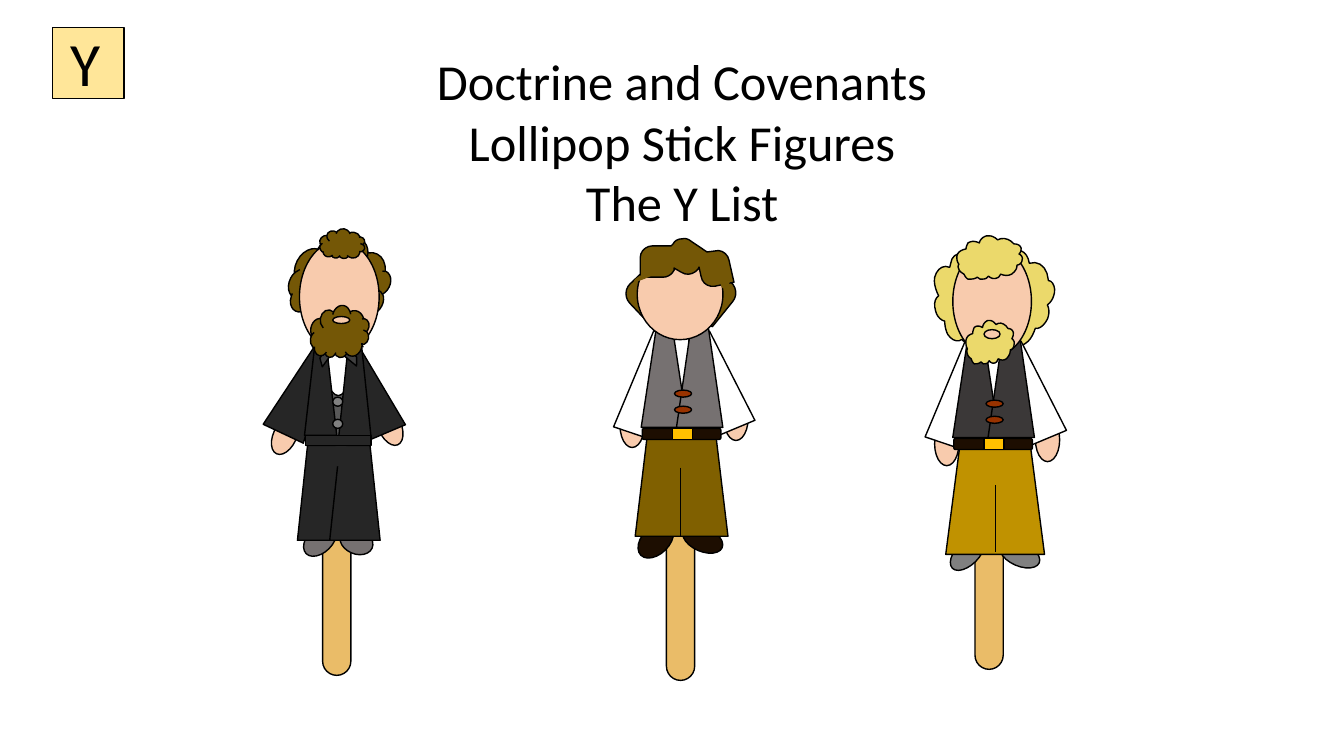
from pptx import Presentation
from pptx.dml.color import RGBColor
from pptx.enum.shapes import MSO_CONNECTOR, MSO_SHAPE
from pptx.enum.text import PP_ALIGN
from pptx.oxml.ns import qn
from pptx.util import Inches, Pt
from lxml import etree

OVAL, RECT, ROUND = MSO_SHAPE.OVAL, MSO_SHAPE.RECTANGLE, MSO_SHAPE.ROUNDED_RECTANGLE
TRAP, SLEEVE = MSO_SHAPE.TRAPEZOID, MSO_SHAPE.FLOWCHART_MANUAL_OPERATION
SLANT, CLOUD, MOON = MSO_SHAPE.FLOWCHART_DATA, MSO_SHAPE.CLOUD, MSO_SHAPE.MOON
DIAG = MSO_SHAPE.ROUND_2_DIAG_RECTANGLE
LINE = MSO_CONNECTOR.STRAIGHT
LEFT, CENTER = PP_ALIGN.LEFT, PP_ALIGN.CENTER

BLACK, WHITE, SKIN, WOOD = "000000", "FFFFFF", "F8CBAD", "EABC68"
BROWN, BLOND, LEATHER, GOLD = "745706", "EBD96B", "1D0E01", "FFC000"
COAL, GRAY, STONE, SLATE, RUST = "262626", "808080", "767171", "404040", "993300"

CURL = [
    (.32, 0), (.35, 0, .38, .02, .4, .04), (.45, .01, .52, .03, .56, .08),
    (.59, .08, .62, .09, .63, .12), (.63, .14, .63, .16, .61, .18),
    (.63, .19, .65, .21, .64, .24), (.64, .26, .62, .29, .59, .29),
    (.59, .32, .58, .34, .56, .36), (.53, .4, .47, .4, .43, .38), (.41, .41),
    (.38, .43, .34, .43, .31, .4), (.29, .42), (.28, .43, .24, .43, .23, .43),
    (.2, .41), (.18, .43, .14, .43, .11, .43), (.09, .42, .08, .4, .07, .38),
    (.04, .36), (.03, .35, .02, .34, .02, .33), (.01, .31, .01, .3, .02, .28),
    (0, .26, 0, .23, 0, .2), (.01, .16, .04, .14, .09, .13),
    (.09, .11, .1, .09, .11, .07), (.14, .05, .18, .05, .22, .07),
    (.23, .03, .26, .01, .29, 0), (.3, 0, .31, 0, .32, 0)]
MANE = [
    (.57, .01), (.61, .01, .65, .04, .67, .09), (.71, .09),
    (.73, .1, .75, .11, .77, .13), (.81, .12), (.82, .12, .84, .12, .85, .12),
    (.91, .12, .96, .17, .97, .25), (1.07, .22, 1.15, .29, 1.16, .42),
    (1.2, .42, 1.23, .48, 1.22, .54), (1.21, .59, 1.19, .63, 1.15, .66),
    (1.17, .7, 1.17, .75, 1.15, .8), (1.12, .86, 1.07, .9, 1.03, .89),
    (1.01, .95, .98, 1.01, .93, 1.04), (.86, 1.09, .79, 1.08, .75, 1.01),
    (.72, 1.04), (.67, 1.08, .6, 1.08, .57, 1.02), (.55, 1), (.53, 1.02),
    (.5, 1.05), (.44, 1.08, .36, 1.07, .3, 1), (.26, 1.03, .2, 1.01, .16, .95),
    (.14, .91, .13, .86, .13, .82), (.09, .81, .05, .77, .04, .72),
    (.02, .65, .03, .6, .07, .57), (.04, .51, .02, .45, .03, .39),
    (.05, .31, .11, .26, .18, .29), (.19, .25), (.2, .17, .27, .13, .34, .18),
    (.34, .15), (.34, .12, .35, .09, .37, .08), (.4, .06, .42, .06, .45, .08),
    (.48, .09), (.48, .05, .51, .02, .54, .01), (.55, 0, .56, 0, .57, .01)]
FRINGE = [
    (.42, .01), (.45, 0, .47, .01, .49, .02), (.67, .14), (.75, .13),
    (.81, .11, .88, .16, .89, .22), (.94, .44), (.75, .48),
    (.68, .49, .62, .45, .61, .38), (.59, .29), (.58, .31),
    (.54, .36, .47, .38, .41, .34), (.34, .3), (.34, .32),
    (.32, .36, .28, .39, .23, .39), (0, .39), (0, .2),
    (0, .13, .06, .08, .12, .08), (.31, .08), (.33, .06),
    (.35, .02, .39, .01, .42, .01)]


def rgb(code):
    return RGBColor.from_string(code)


def trace(steps):
    dots = []
    for step in steps:
        if len(step) == 2:
            dots.append(step)
            continue
        knots = [dots[-1], step[:2], step[2:4], step[4:]]
        for t in (.2, .4, .6, .8, 1):
            u = 1 - t
            mix = (u ** 3, 3 * u * u * t, 3 * u * t * t, t ** 3)
            dots.append(tuple(sum(m * k[i] for m, k in zip(mix, knots)) for i in (0, 1)))
    return dots


def outline(group, steps, x, y, w, h):
    dots = trace(steps)
    wide, high = (max(axis) for axis in zip(*dots))
    spots = [(Inches(x + a * w / wide), Inches(y + b * h / high)) for a, b in dots]
    pen = group.shapes.build_freeform(*spots[0])
    pen.add_line_segments(spots[1:], close=True)
    return pen.convert_to_shape()


def part(group, kind, x, y, w, h, fill, fmt=None, adj=(), edge=True, flip=False):
    if isinstance(kind, list):
        shape = outline(group, kind, x, y, w, h)
    else:
        shape = group.shapes.add_shape(kind, Inches(x), Inches(y), Inches(w), Inches(h))
    shape.shadow.inherit = False
    shape.fill.solid()
    shape.fill.fore_color.rgb = rgb(fill)
    if edge:
        shape.line.color.rgb = rgb(BLACK)
        shape.line.width = Pt(1)
    else:
        shape.line.fill.background()
    for i, value in enumerate(adj):
        shape.adjustments[i] = value
    for key, value in (fmt or {}).items():
        setattr(shape, key, value)
    if flip:
        shape._element.spPr.find(qn("a:xfrm")).set("flipH", "1")


def figure(slide, x, y, parts):
    group = slide.shapes.add_group_shape()
    for kind, dx, dy, *rest in parts:
        opts = rest.pop() if isinstance(rest[-1], dict) else {}
        turn = {"rotation": opts.pop("rot", 0)}
        part(group, kind, x + dx, y + dy, *rest, fmt=turn, **opts)
    return group


def words(slide, x, y, w, h, lines, size, align):
    frame = slide.shapes.add_textbox(Inches(x), Inches(y), Inches(w), Inches(h)).text_frame
    frame.word_wrap = True
    frame.text = "\n".join(lines)
    for para in frame.paragraphs:
        para.alignment = align
        for key, value in {"name": "Calibri", "size": Pt(size)}.items():
            setattr(para.font, key, value)
        para.font.color.rgb = rgb(BLACK)


def farmer(slide, x, y, stick, back, feet, legs, hands, vest, front, seam):
    body = [(TRAP, .27, .06, .7, .98, WHITE)]
    body += [(OVAL, dx, dy, .24, .43, SKIN) for dx, dy in hands]
    body += [
        (SLEEVE, .79, .03, .37, .99, WHITE, {"rot": 157.3}),
        (SLEEVE, .09, .03, .37, 1.03, WHITE, {"rot": 198.6}),
        (ROUND, .22, .99, .78, .11, LEATHER),
        (RECT, .52, .99, .2, .11, GOLD),
        (TRAP, .21, 0, .46, .98, vest, {"adj": [.324]}),
        (TRAP, .56, 0, .46, .98, vest, {"adj": [.309]})]
    body += [(OVAL, .54, dy, .17, .07, RUST) for dy in (.61, .77)]
    pole = [(ROUND, *stick, .28, 2.22, WOOD, {"adj": [.5]})]
    group = figure(slide, x, y, pole + back + feet + legs + body + front)
    dx, top, end = seam
    line = group.shapes.add_connector(
        LINE, Inches(x + dx), Inches(y + top), Inches(x + dx), Inches(y + end))
    line.line.color.rgb = rgb(BLACK)
    line.line.width = Pt(.5)
    etree.SubElement(line._element.spPr, qn("a:effectLst"))


def preacher(slide, x, y):
    figure(slide, x, y, [
        (ROUND, .5, 2.28, .28, 2.22, WOOD, {"adj": [.5]}),
        (OVAL, .01, 1.93, .23, .39, SKIN, {"rot": 25}),
        (OVAL, 1.05, 1.82, .23, .41, SKIN, {"rot": 337}),
        (TRAP, .1, 1.16, .44, .99, COAL, {"rot": 25.2, "adj": [.324]}),
        (TRAP, .75, 1.17, .4, .96, COAL, {"rot": 337, "adj": [.324]}),
        (OVAL, .35, 2.96, .25, .39, STONE, {"rot": 45.1}),
        (TRAP, .33, 1.26, .65, .91, WHITE),
        (OVAL, .71, 3, .25, .34, STONE, {"rot": 293.5}),
        *[(SLEEVE, dx, 2.22, .5, .94, COAL, {"rot": 180}) for dx in (.25, .57)],
        (OVAL, .55, 2.22, .27, .21, COAL, {"edge": False}),
        (MOON, .28, 1.64, .75, .32, "595959", {"rot": 270, "adj": [.601]}),
        (TRAP, .66, 1.24, .32, .89, COAL, {"adj": [.29]}),
        (TRAP, .32, 1.21, .32, .91, COAL, {"adj": [.324]}),
        (RECT, .33, 2.12, .65, .1, COAL),
        *[(OVAL, .6, dy, .1, .09, GRAY) for dy in (1.74, 1.96)],
        (SLANT, .41, 1.27, .28, .07, SLATE, {"rot": 125.9}),
        (SLANT, .61, 1.28, .28, .07, SLATE, {"rot": 219.5, "flip": True}),
        (SLANT, .4, 1.14, .28, .1, WHITE, {"rot": 180}),
        (SLANT, .62, 1.14, .28, .1, WHITE, {"rot": 180, "flip": True}),
        (ROUND, .61, 1.15, .12, .1, SLATE, {"rot": 180}),
        (CLOUD, .2, .13, .95, .93, BROWN, {"rot": 207.3}),
        (OVAL, .27, .19, .79, 1.11, SKIN),
        (CLOUD, .38, .83, .58, .53, BROWN, {"rot": 189.1}),
        (OVAL, .6, .94, .17, .07, SKIN),
        (OVAL, .61, .15, .17, .17, BROWN, {"rot": 65.4, "edge": False}),
        (CLOUD, .47, .07, .45, .3, BROWN, {"rot": 189.1})])


def main():
    deck = Presentation()
    deck.slide_width, deck.slide_height = Inches(13.33), Inches(7.5)
    slide = deck.slides.add_slide(deck.slide_layouts[6])
    title = ["Doctrine and Covenants", "Lollipop Stick Figures", "The Y List"]
    words(slide, 3.92, .45, 5.69, 2.52, title, 36, CENTER)
    farmer(
        slide, 9.24, 3.36, (.43, 1.06), [(MANE, 0, -1, 1.22, 1.08, BLOND)],
        [(OVAL, .24, 1.92, .23, .42, GRAY, {"rot": 45.1}),
         (OVAL, .76, 1.93, .23, .42, GRAY, {"rot": 293.5})],
        [(TRAP, .14, 1.03, .98, 1.11, "C09200", {"adj": [.147]})],
        [(.03, .83), (1.03, .79)], "3B3838",
        [(OVAL, .21, -.92, .78, 1.1, SKIN),
         (CURL, .25, -1.02, .65, .43, BLOND),
         (CURL, .34, -.18, .48, .43, BLOND),
         (OVAL, .52, -.09, .16, .09, SKIN)],
        (.63, 1.45, 2.12))
    farmer(
        slide, 6.15, 3.26, (.46, 1.27), [],
        [(OVAL, .22, 1.89, .27, .42, LEATHER, {"rot": 45.1}),
         (OVAL, .7, 1.88, .24, .42, LEATHER, {"rot": 293.5})],
        [(TRAP, .15, .93, .92, 1.13, "806000", {"adj": [.147]})],
        [(0, .75), (1.03, .68)], STONE,
        [(DIAG, .69, -.49, .46, .36, BROWN, {"rot": 308.9, "adj": [.384, 0]}),
         (DIAG, .09, -.53, .36, .4, BROWN, {"rot": 316.7, "adj": [.384, 0]}),
         (OVAL, .17, -.79, .85, .9, SKIN),
         (FRINGE, .2, -.9, .93, .48, BROWN),
         (OVAL, .52, -.82, .1, .21, BROWN, {"edge": False}),
         (OVAL, .99, -.6, .1, .21, BROWN, {"edge": False}),
         (OVAL, .24, -.67, .05, .28, BROWN, {"rot": 65.4, "edge": False})],
        (.6, 1.38, 2.06))
    preacher(slide, 2.7, 2.2)
    part(slide, RECT, .52, .27, .71, .71, "FFE699")
    words(slide, .6, .2, .63, .84, ["Y"], 44, LEFT)
    deck.save("out.pptx")


if __name__ == "__main__":
    main()
